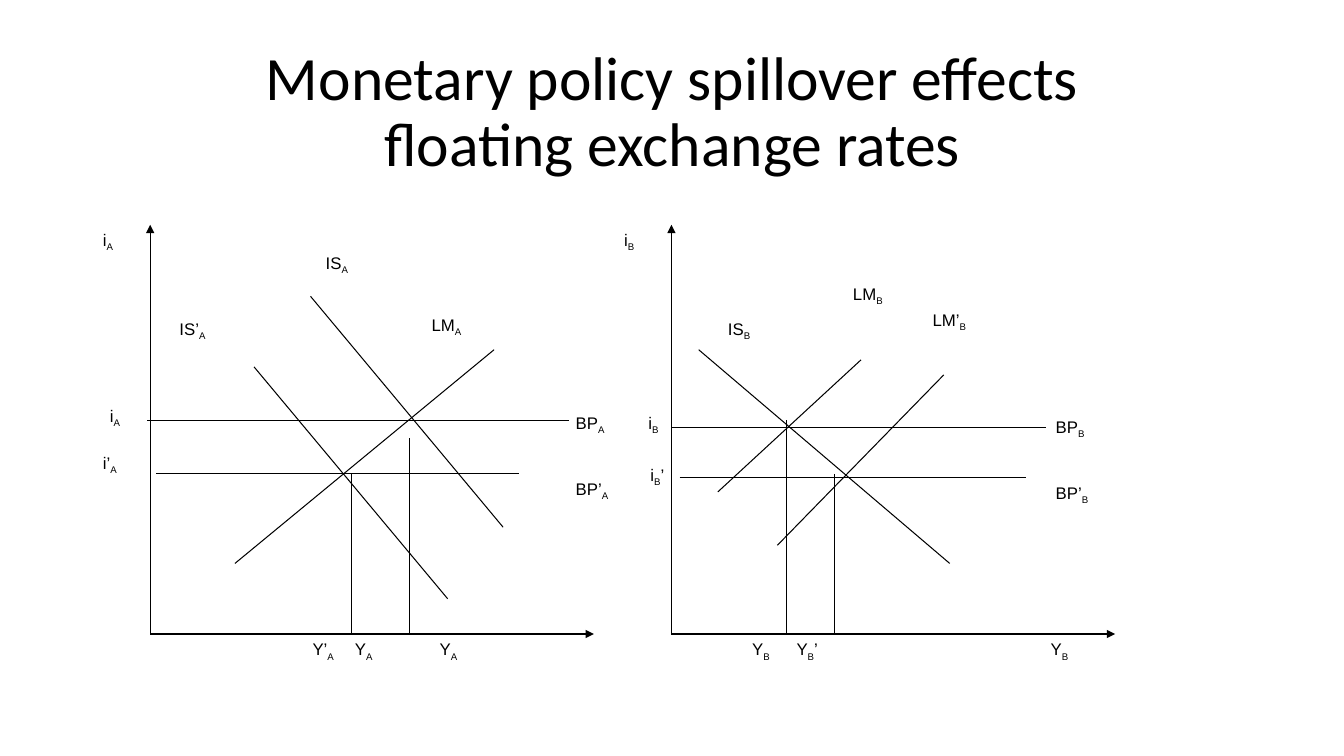
from dataclasses import dataclass

import lxml.etree
import pptx
import pptx.dml.color
import pptx.enum.dml
import pptx.enum.shapes
import pptx.enum.text
import pptx.oxml.ns
import pptx.presentation
import pptx.shapes.connector
import pptx.slide
import pptx.text.text
import pptx.util

Inches = pptx.util.Inches
Pt = pptx.util.Pt


@dataclass(frozen=True)
class Theme:
    ink: pptx.dml.color.RGBColor = pptx.dml.color.RGBColor(0, 0, 0)
    title_font: str = "Calibri"
    title_size: float = 44
    label_font: str = "Arial"
    label_size: float = 12
    line_width: float = 0.75
    guide_width: float = 0.25


@dataclass(frozen=True)
class Label:
    left: float
    top: float
    base: str
    suffix: str = ""


@dataclass(frozen=True)
class Curve:
    x1: float
    y1: float
    x2: float
    y2: float


@dataclass(frozen=True)
class Guide:
    x: float
    top: float


@dataclass(frozen=True)
class Country:
    subscript: str
    axis_x: float
    curves: tuple[Curve, ...]
    guides: tuple[Guide, ...]
    labels: tuple[Label, ...]


THEME = Theme()
AXIS_TOP, AXIS_BOTTOM, AXIS_LENGTH = 2.23, 6.29, 4.4
LABEL_WIDTH, LABEL_HEIGHT = 0.42, 0.25
OUTPUT_LABEL_TOP = 6.34

COUNTRIES = (
    Country(
        "A",
        1.49,
        curves=(
            Curve(3.08, 2.94, 4.99, 5.23),
            Curve(2.52, 3.64, 4.44, 5.94),
            Curve(2.33, 5.59, 4.9, 3.47),
            Curve(1.46, 4.17, 5.64, 4.17),
            Curve(1.55, 4.7, 5.15, 4.7),
        ),
        guides=(Guide(3.48, 4.7), Guide(4.06, 4.35)),
        labels=(
            Label(1.02, 2.28, "i"),
            Label(3.23, 2.51, "IS"),
            Label(1.78, 3.16, "IS’"),
            Label(4.28, 3.12, "LM"),
            Label(1.09, 4.02, "i"),
            Label(1.02, 4.49, "i’"),
            Label(5.71, 4.09, "BP"),
            Label(5.71, 4.75, "BP’"),
            Label(3.1, OUTPUT_LABEL_TOP, "Y’"),
            Label(3.52, OUTPUT_LABEL_TOP, "Y"),
            Label(4.36, OUTPUT_LABEL_TOP, "Y"),
        ),
    ),
    Country(
        "B",
        6.66,
        curves=(
            Curve(6.93, 3.47, 9.42, 5.59),
            Curve(7.12, 4.88, 8.54, 3.57),
            Curve(7.71, 5.41, 9.36, 3.72),
            Curve(6.66, 4.24, 10.37, 4.24),
            Curve(6.74, 4.74, 10.18, 4.74),
        ),
        guides=(Guide(7.8, 4.17), Guide(8.27, 4.7)),
        labels=(
            Label(6.19, 2.28, "i"),
            Label(7.22, 3.16, "IS"),
            Label(8.46, 2.81, "LM"),
            Label(9.25, 3.07, "LM’"),
            Label(6.43, 4.09, "i"),
            Label(6.45, 4.61, "i", "’"),
            Label(10.47, 4.13, "BP"),
            Label(10.47, 4.79, "BP’"),
            Label(7.46, OUTPUT_LABEL_TOP, "Y"),
            Label(7.9, OUTPUT_LABEL_TOP, "Y", "’"),
            Label(10.42, OUTPUT_LABEL_TOP, "Y"),
        ),
    ),
)


def format_run(run: pptx.text.text._Run, font: str, size: float) -> None:
    run.font.name = font
    run.font.size = Pt(size)
    run.font.color.rgb = THEME.ink


def add_title(slide: pptx.slide.Slide) -> None:
    title = slide.shapes.title
    title.left, title.top = Inches(0.92), Inches(0.4)
    title.width, title.height = Inches(11.5), Inches(1.45)
    frame = title.text_frame
    frame.text = "Monetary policy spillover effects\vfloating exchange rates"
    frame.auto_size = pptx.enum.text.MSO_AUTO_SIZE.NONE
    frame.vertical_anchor = pptx.enum.text.MSO_ANCHOR.MIDDLE
    paragraph = frame.paragraphs[0]
    paragraph.alignment = pptx.enum.text.PP_ALIGN.CENTER
    paragraph.line_spacing = 0.9
    for run in paragraph.runs:
        format_run(run, THEME.title_font, THEME.title_size)


def add_line(
    slide: pptx.slide.Slide, curve: Curve, width: float = THEME.line_width
) -> pptx.shapes.connector.Connector:
    connector = slide.shapes.add_connector(
        pptx.enum.shapes.MSO_CONNECTOR.STRAIGHT,
        Inches(curve.x1), Inches(curve.y1), Inches(curve.x2), Inches(curve.y2),
    )
    connector.line.color.rgb = THEME.ink
    connector.line.width = Pt(width)
    lxml.etree.SubElement(connector._element.spPr, pptx.oxml.ns.qn("a:effectLst"))
    return connector


def add_axis(slide: pptx.slide.Slide, curve: Curve) -> None:
    line = add_line(slide, curve).line._get_or_add_ln()
    lxml.etree.SubElement(line, pptx.oxml.ns.qn("a:tailEnd")).set("type", "triangle")


def add_guide(slide: pptx.slide.Slide, guide: Guide) -> None:
    curve = Curve(guide.x, guide.top, guide.x, AXIS_BOTTOM)
    connector = add_line(slide, curve, THEME.guide_width)
    connector.line.dash_style = pptx.enum.dml.MSO_LINE.ROUND_DOT


def add_label(slide: pptx.slide.Slide, label: Label, subscript: str) -> None:
    box = slide.shapes.add_textbox(
        Inches(label.left), Inches(label.top), Inches(LABEL_WIDTH), Inches(LABEL_HEIGHT)
    )
    frame = box.text_frame
    frame.word_wrap = True
    frame.margin_left = frame.margin_right = frame.margin_top = frame.margin_bottom = 0
    frame.text = label.base
    paragraph = frame.paragraphs[0]
    subscript_run = paragraph.add_run()
    subscript_run.text = subscript
    if label.suffix:
        paragraph.add_run().text = label.suffix
    for run in paragraph.runs:
        format_run(run, THEME.label_font, THEME.label_size)
    subscript_run.font._element.set("baseline", "-25000")


def add_country(slide: pptx.slide.Slide, country: Country) -> None:
    x = country.axis_x
    add_axis(slide, Curve(x, AXIS_BOTTOM, x, AXIS_TOP))
    add_axis(slide, Curve(x, AXIS_BOTTOM, x + AXIS_LENGTH, AXIS_BOTTOM))
    for guide in country.guides:
        add_guide(slide, guide)
    for curve in country.curves:
        add_line(slide, curve)
    for label in country.labels:
        add_label(slide, label, country.subscript)


def main() -> None:
    presentation = pptx.Presentation()
    presentation.slide_width = Inches(13.33)
    presentation.slide_height = Inches(7.5)
    slide = presentation.slides.add_slide(presentation.slide_layouts[5])
    add_title(slide)
    for country in COUNTRIES:
        add_country(slide, country)
    presentation.save("out.pptx")


if __name__ == "__main__":
    main()
